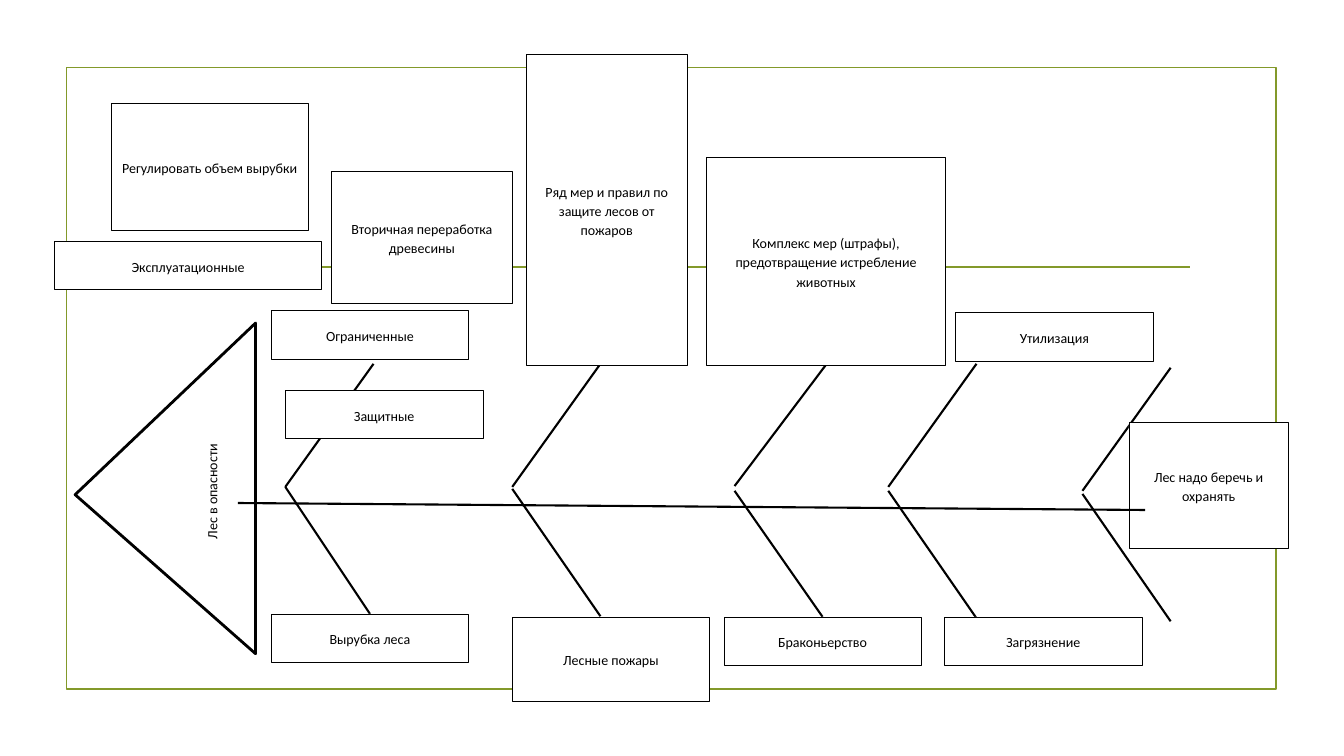
"""Builds a fishbone diagram slide about forest protection."""
from dataclasses import dataclass
from typing import Optional

import pptx
import pptx.dml.color
import pptx.enum.shapes
import pptx.enum.text
import pptx.util
from lxml import etree
from pptx.oxml.ns import qn

Pt = pptx.util.Pt
RGB = pptx.dml.color.RGBColor
Preset = pptx.enum.shapes.MSO_SHAPE


@dataclass(frozen=True)
class Theme:
    font: str = "Calibri"
    text_size: float = 10
    ink: RGB = RGB(0x00, 0x00, 0x00)
    paper: RGB = RGB(0xFF, 0xFF, 0xFF)
    olive: RGB = RGB(0x83, 0x99, 0x2A)
    frame_width: float = 1.25
    bone_width: float = 1.5
    head_width: float = 2
    box_width: float = 0.25


@dataclass(frozen=True)
class Label:
    text: str
    left: float
    top: float
    width: float = 141.1
    height: float = 34.6


@dataclass(frozen=True)
class Rib:
    x: float
    upper_y: float
    lower_y: float
    upper_label: Optional[str] = None
    lower_label: Optional[str] = None


THEME = Theme()
RIB_RUN, RIB_RISE, RIB_DROP = 63, 87.9, 91
TOP_SIDE, BOTTOM_SIDE = 0, 2

HEAD = Label("Лес в опасности", 0, 284.4, 236.2, 128.9)
FELLING = "Вырубка леса"
POACHING = "Браконьерство"
PENALTIES = "Комплекс мер (штрафы), предотвращение истребление животных"

RIBS = [
    Rib(203.8, 347.8, 347.8, lower_label=FELLING),
    Rib(365.9, 347.8, 349.2),
    Rib(524.7, 347.2, 350.6, PENALTIES, POACHING),
    Rib(634.5, 347.8, 350.6),
    Rib(773.2, 350.6, 352.8),
]

LABELS = [
    Label("Защитные", 203.8, 278.6),
    Label(FELLING, 193.7, 438.5),
    Label("Лесные пожары", 365.8, 440.6, height=60.5),
    Label(POACHING, 517, 440.6),
    Label("Загрязнение", 674.6, 440.6),
    Label("Лес надо беречь и охранять", 806.4, 301.7, 113.8, 90),
    Label("Ряд мер и правил по защите лесов от пожаров", 375.8, 38.9, 115.2, 221.8),
    Label(PENALTIES, 504.7, 112.3, 170.6, 148.3),
    Label("Утилизация", 682.6, 223.2),
    Label("Ограниченные", 193.7, 221.8),
    Label("Вторичная переработка древесины", 236.9, 122.4, 128.9, 94.3),
    Label("Эксплуатационные", 38.9, 172.1, 190.8),
    Label("Регулировать объем вырубки", 79.2, 73.4, height=91.4),
]


def draw_line(slide, start: tuple[float, float], end: tuple[float, float], color: RGB, width: float):
    line = slide.shapes.add_connector(
        pptx.enum.shapes.MSO_CONNECTOR.STRAIGHT, *map(Pt, start + end)
    )
    line.line.color.rgb = color
    line.line.width = Pt(width)
    etree.SubElement(line._element.spPr, qn("a:effectLst"))
    return line


def draw_label(slide, label: Label, preset: Preset, width: float):
    shape = slide.shapes.add_shape(
        preset, Pt(label.left), Pt(label.top), Pt(label.width), Pt(label.height)
    )
    shape.shadow.inherit = False
    shape.fill.solid()
    shape.fill.fore_color.rgb = THEME.paper
    shape.line.color.rgb = THEME.ink
    shape.line.width = Pt(width)
    frame = shape.text_frame
    frame.word_wrap = True
    frame.vertical_anchor = pptx.enum.text.MSO_ANCHOR.MIDDLE
    paragraph = frame.paragraphs[0]
    paragraph.alignment = pptx.enum.text.PP_ALIGN.CENTER
    paragraph.line_spacing = 1.15
    paragraph.space_after = Pt(10)
    run = paragraph.add_run()
    run.text = label.text
    run.font.name = THEME.font
    run.font.size = Pt(THEME.text_size)
    run.font.color.rgb = THEME.ink
    return shape


def draw_backdrop(slide) -> None:
    border = slide.shapes.add_shape(Preset.RECTANGLE, Pt(47.5), Pt(48.2), Pt(864), Pt(444.2))
    border.shadow.inherit = False
    border.fill.background()
    border.line.color.rgb = THEME.olive
    border.line.width = Pt(THEME.frame_width)
    draw_line(slide, (110.2, 190.8), (850.3, 190.8), THEME.olive, THEME.frame_width)


def draw_fishbone(slide) -> None:
    head = draw_label(slide, HEAD, Preset.ISOSCELES_TRIANGLE, THEME.head_width)
    head.adjustments[0] = 0.481
    head.rotation = 270

    joints = []
    for rib in RIBS:
        tip_x = rib.x + RIB_RUN
        for y, tip_y, text, side in (
            (rib.upper_y, rib.upper_y - RIB_RISE, rib.upper_label, BOTTOM_SIDE),
            (rib.lower_y, rib.lower_y + RIB_DROP, rib.lower_label, TOP_SIDE),
        ):
            bone = draw_line(slide, (rib.x, y), (tip_x, tip_y), THEME.ink, THEME.bone_width)
            if text:
                joints.append((bone, text, side))

    boxes = {
        label.text: draw_label(slide, label, Preset.RECTANGLE, THEME.box_width)
        for label in LABELS
    }
    for bone, text, side in joints:
        bone.end_connect(boxes[text], side)

    draw_line(slide, (169.9, 359.3), (817.9, 364.3), THEME.ink, THEME.bone_width)


def main() -> None:
    presentation = pptx.Presentation()
    presentation.slide_width, presentation.slide_height = Pt(960), Pt(540)
    slide = presentation.slides.add_slide(presentation.slide_layouts[6])
    draw_backdrop(slide)
    draw_fishbone(slide)
    presentation.save("out.pptx")


if __name__ == "__main__":
    main()
